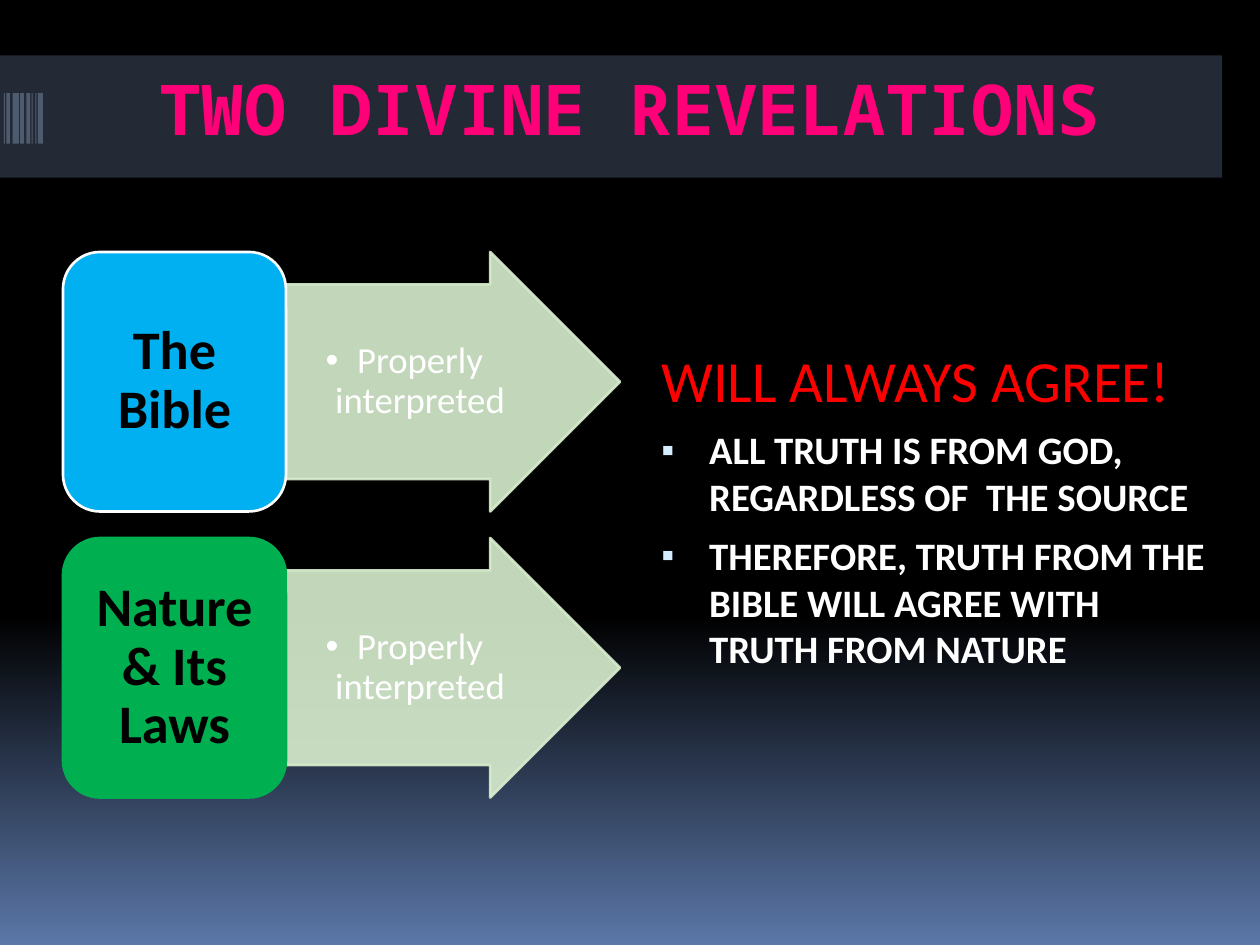
from lxml import etree
from pptx import Presentation
from pptx.dml.color import RGBColor
from pptx.enum.shapes import MSO_SHAPE
from pptx.enum.text import MSO_ANCHOR, PP_ALIGN
from pptx.oxml.ns import qn
from pptx.util import Inches, Pt

RECT, ROUNDED, ARROW = MSO_SHAPE.RECTANGLE, MSO_SHAPE.ROUNDED_RECTANGLE, MSO_SHAPE.RIGHT_ARROW
TOP, MIDDLE = MSO_ANCHOR.TOP, MSO_ANCHOR.MIDDLE
LEFT, CENTER = PP_ALIGN.LEFT, PP_ALIGN.CENTER

# Content
TITLE = "TWO DIVINE REVELATIONS"
SOURCES = [  # label, fill, outline
    ("The Bible", "00B0F0", "FFFFFF"),
    ("Nature & Its Laws", "00B050", "00B050"),
]
CONDITION = "Properly interpreted"
CONCLUSION = "WILL ALWAYS AGREE!"
REASONS = [
    "ALL TRUTH IS FROM GOD, REGARDLESS OF  THE SOURCE",
    "THEREFORE, TRUTH FROM THE BIBLE WILL AGREE WITH TRUTH FROM NATURE",
]
BARCODE = [(0.03, 0.01), (0.05, 0.03), (0.1, 0.05), (0.16, 0.03),  # left, width
           (0.21, 0.03), (0.25, 0.01), (0.28, 0.01), (0.3, 0.04)]

# Formats
TITLE_FONT = {"name": "Noto Sans Mono", "size": Pt(40), "bold": True}
LABEL_FONT = {"name": "Calibri", "size": Pt(31), "bold": True}
CONDITION_FONT = {"name": "Calibri", "size": Pt(21)}
CONCLUSION_FONT = {"name": "Calibri", "size": Pt(33.3)}
REASON_FONT = {"name": "Calibri", "size": Pt(22.2), "bold": True}
TIGHT = {"alignment": CENTER, "line_spacing": 0.9}
PLAIN = {"alignment": LEFT}
SPACED = {"alignment": LEFT, "space_before": Pt(7)}

# Grid of source rows
ROW_LEFT, ROW_TOP, ROW_HEIGHT, ROW_PITCH = 0.5, 2, 2.06, 2.27
LABEL_WIDTH, ARROW_WIDTH = 1.77, 2.65


def color(value):
    return RGBColor.from_string(value)


def set_alpha(fill_format, percent):
    """Make a solid fill, of a shape or of a line, partly transparent."""
    tag = fill_format._xPr.find(qn("a:solidFill"))[0]
    etree.SubElement(tag, qn("a:alpha"), val=str(percent * 1000))


def add_block(kind, place, fill, line=None, alpha=None):
    shape = slide.shapes.add_shape(kind, *map(Inches, place))
    shape.shadow.inherit = False
    shape.fill.solid()
    shape.fill.fore_color.rgb = color(fill)
    if line:
        shape.line.color.rgb = color(line)
        shape.line.width = Pt(1.5)
    else:
        shape.line.fill.background()
    if alpha:
        set_alpha(shape.fill, alpha)
        if line:
            set_alpha(shape.line.fill, alpha)
    return shape


def set_frame(shape, anchor, side, edge):
    frame = shape.text_frame
    frame.word_wrap = True
    frame.vertical_anchor = anchor
    frame.margin_left = frame.margin_right = Inches(side)
    frame.margin_top = frame.margin_bottom = Inches(edge)
    return frame


def write(para, text, font, ink, layout):
    for name, value in layout.items():
        setattr(para, name, value)
    span = para.add_run()
    span.text = text
    for name, value in font.items():
        setattr(span.font, name, value)
    span.font.color.rgb = color(ink)
    return span


def set_indent(para, left, hanging, bullet=None, bullet_color="FFFFFF", percent=100):
    props = para._p.get_or_add_pPr()
    props.set("marL", str(Inches(left)))
    props.set("indent", str(Inches(-hanging)))
    if bullet:
        holder = etree.SubElement(props, qn("a:buClr"))
        etree.SubElement(holder, qn("a:srgbClr"), val=bullet_color)
        etree.SubElement(props, qn("a:buSzPct"), val=str(percent * 1000))
        etree.SubElement(props, qn("a:buFont"), typeface="Arial")
        etree.SubElement(props, qn("a:buChar"), char=bullet)


deck = Presentation()
deck.slide_width, deck.slide_height = Inches(10), Inches(7.5)
slide = deck.slides.add_slide(deck.slide_layouts[6])

# Background fading from black to blue
backdrop = slide.background.fill
backdrop.gradient()
backdrop.gradient_angle = 270
for stop, (position, shade) in zip(backdrop.gradient_stops, [(0.65, "000000"), (1, "5B77A8")]):
    stop.position = position
    stop.color.rgb = color(shade)

# Title band with its barcode ornament
add_block(RECT, (0, 0.44, 9.7, 0.97), "586A86", alpha=40)
for left, width in BARCODE:
    add_block(RECT, (left, 0.74, width, 0.4), "4E5B6F")
title_box = slide.shapes.add_textbox(*map(Inches, (0.5, 0.47, 9, 1)))
title_para = set_frame(title_box, TOP, 0.1, 0.05).paragraphs[0]
title_span = write(title_para, TITLE, TITLE_FONT, "FF0079", {"alignment": CENTER})
title_span.font._element.set("spc", "50")

# Each source: a label and the arrow leading from it
for row, (label, fill, line) in enumerate(SOURCES):
    top = ROW_TOP + row * ROW_PITCH
    arrow = add_block(ARROW, (ROW_LEFT + LABEL_WIDTH, top, ARROW_WIDTH, ROW_HEIGHT),
                      "D8EECE", "D8EECE", 90)
    arrow.adjustments[0] = 0.75
    para = set_frame(arrow, MIDDLE, 0.01, 0.01).paragraphs[0]
    write(para, CONDITION, CONDITION_FONT, "FFFFFF", TIGHT)
    set_indent(para, 0.25, 0.25, "•")

    box = add_block(ROUNDED, (ROW_LEFT, top, LABEL_WIDTH, ROW_HEIGHT), fill, line)
    para = set_frame(box, MIDDLE, 0.13, 0.06).paragraphs[0]
    write(para, label, LABEL_FONT, "000000", TIGHT)

# Conclusion and its reasons
body = slide.shapes.add_textbox(*map(Inches, (5.08, 2.68, 4.59, 3.27)))
frame = set_frame(body, TOP, 0.1, 0.05)
write(frame.paragraphs[0], CONCLUSION, CONCLUSION_FONT, "FF0000", PLAIN)
set_indent(frame.paragraphs[0], 0.45, 0.38)
for reason in REASONS:
    para = frame.add_paragraph()
    write(para, reason, REASON_FONT, "FFFFFF", SPACED)
    set_indent(para, 0.45, 0.38, "▪", "D6ECFF", 95)

deck.save("out.pptx")
